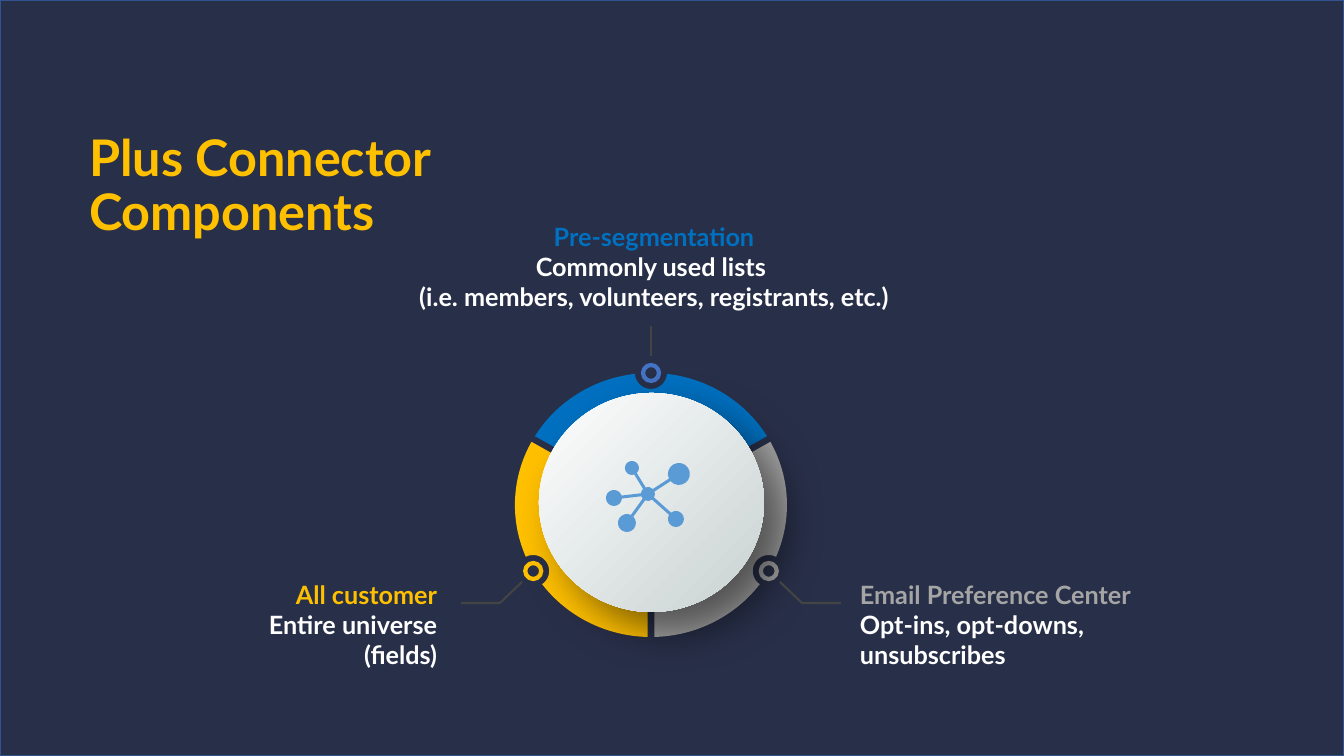
import math

from lxml import etree
from pptx import Presentation
from pptx.dml.color import RGBColor
from pptx.enum.shapes import MSO_CONNECTOR, MSO_SHAPE
from pptx.enum.text import MSO_ANCHOR, MSO_AUTO_SIZE, PP_ALIGN
from pptx.oxml.ns import qn
from pptx.util import Pt

PX = 914400 / 100.8
FINE = 100  # outline steps in one px

LEFT, CENTER, RIGHT = PP_ALIGN.LEFT, PP_ALIGN.CENTER, PP_ALIGN.RIGHT
OVAL, RECTANGLE = MSO_SHAPE.OVAL, MSO_SHAPE.RECTANGLE

NAVY = RGBColor(0x28, 0x2F, 0x48)
FRAME = RGBColor(0x31, 0x53, 0x8F)
WHITE = RGBColor(0xFF, 0xFF, 0xFF)
BLUE = RGBColor(0x00, 0x70, 0xC0)
DOT_BLUE = RGBColor(0x44, 0x72, 0xC4)
AMBER = RGBColor(0xFF, 0xC0, 0x00)
GREY = RGBColor(0xA5, 0xA5, 0xA5)
LEADER = RGBColor(0x44, 0x44, 0x44)
ICON_BLUE = RGBColor(0x5B, 0x9B, 0xD5)
DISC_LIGHT = RGBColor(0xFE, 0xFF, 0xFF)
DISC_DARK = RGBColor(0xC8, 0xD1, 0xD1)

deck = Presentation()
deck.slide_width, deck.slide_height = round(1344 * PX), round(756 * PX)
page = deck.slides.add_slide(deck.slide_layouts[5])


def write(paragraph, text, *, colour, size=18, align=LEFT, spacing=None):
    paragraph.text = text
    paragraph.alignment = align
    paragraph.line_spacing = spacing
    for span in paragraph.runs:
        span.font.name = "Lato"
        span.font.size = Pt(size)
        span.font.bold = True
        span.font.color.rgb = colour


def outline(arcs, fill=None, line=None):
    """Join arcs (x, y, x radius, y radius, start, end in degrees); closed if filled."""
    points, curves = [], []
    for x, y, radius_x, radius_y, start, end in arcs:
        pieces = math.ceil(abs(end - start) / 95)
        turn = math.radians(end - start) / max(pieces, 1)
        reach = 4 / 3 * math.tan(turn / 4)
        for piece in range(pieces + 1):
            angle = math.radians(start) + turn * piece
            across, down = math.cos(angle), math.sin(angle)
            arrive = (across + reach * down, down - reach * across)
            leave = (across - reach * down, down + reach * across)
            knots = [arrive] * (piece > 0) + [(across, down)] + [leave] * (piece < pieces)
            points += [((x + radius_x * u) * FINE, (y + radius_y * v) * FINE) for u, v in knots]
            if piece < pieces:
                curves.append(len(points) - 1)
    builder = page.shapes.build_freeform(*points[0], scale=PX / FINE)
    builder.add_line_segments(points[1:], close=fill is not None)
    shape = builder.convert_to_shape()
    segments = list(shape.element.iter(qn("a:lnTo")))
    for first in curves:
        curve = etree.Element(qn("a:cubicBezTo"))
        segments[first - 1].addprevious(curve)
        for segment in segments[first - 1:first + 2]:
            curve.append(segment[0])
            segment.getparent().remove(segment)
    shape.shadow.inherit = False
    if fill is None:
        shape.fill.background()
        shape.line.color.rgb = line
        shape.line.width = Pt(1.5)
    else:
        shape.fill.solid()
        shape.fill.fore_color.rgb = fill
        shape.line.fill.background()


# Backdrop and title
title = page.shapes.title
backdrop = page.shapes.add_shape(RECTANGLE, 0, 0, deck.slide_width, deck.slide_height)
backdrop.shadow.inherit = False
backdrop.fill.solid()
backdrop.fill.fore_color.rgb = NAVY
backdrop.line.color.rgb = FRAME
backdrop.line.width = Pt(1)
title.element.addprevious(backdrop.element)

title.left, title.top, title.width, title.height = (
    round(length * PX) for length in (79, 114, 1159, 146))
title.text_frame.vertical_anchor = MSO_ANCHOR.MIDDLE
title.text_frame.auto_size = MSO_AUTO_SIZE.NONE
write(title.text_frame.paragraphs[0], "Plus Connector\vComponents",
      colour=AMBER, size=36, spacing=0.9)

# Ring of three sectors, each notched around its dot
RING_X, RING_Y, RING_WIDE, RING_HIGH = 651, 505, 136, 132
HALF_SECTOR, HALF_NOTCH, NOTCH, DOT, GAP = 58.6, 6.8, 16, 16, 4
for middle, fill, dot_colour in ((270, BLUE, DOT_BLUE), (150, AMBER, AMBER), (30, GREY, GREY)):
    across, down = math.cos(math.radians(middle)), math.sin(math.radians(middle))
    dot_x, dot_y = RING_X + RING_WIDE * across, RING_Y + RING_HIGH * down
    ring = (RING_X, RING_Y, RING_WIDE, RING_HIGH)
    dot = page.shapes.add_shape(OVAL, round((dot_x - DOT / 2) * PX), round((dot_y - DOT / 2) * PX),
                                round(DOT * PX), round(DOT * PX))
    dot.shadow.inherit = False
    dot.fill.background()
    dot.line.color.rgb = dot_colour
    dot.line.width = Pt(3)
    outline([
        (RING_X + GAP * across, RING_Y + GAP * down, 0, 0, 0, 0),
        (*ring, middle - HALF_SECTOR, middle - HALF_NOTCH),
        (dot_x, dot_y, NOTCH, NOTCH, middle - 93, middle - 267),
        (*ring, middle + HALF_NOTCH, middle + HALF_SECTOR),
    ], fill=fill)

# Central disc
disc = page.shapes.add_shape(OVAL, *(round(length * PX) for length in (539, 393, 225, 219)))
disc.fill.gradient()
disc.fill.gradient_angle = 315
for stop, colour in zip(disc.fill.gradient_stops, (DISC_LIGHT, DISC_DARK)):
    stop.color.rgb = colour
disc.line.fill.background()
disc.shadow.inherit = False
shadow = etree.SubElement(disc.element.spPr.find(qn("a:effectLst")), qn("a:outerShdw"),
                          blurRad=str(Pt(30)), dist=str(Pt(20)), dir="2700000",
                          algn="tl", rotWithShape="0")
shade = etree.SubElement(shadow, qn("a:srgbClr"), val="000000")
etree.SubElement(shade, qn("a:alpha"), val="50000")

# Leaders
for side in (1, -1):
    outline([(RING_X + side * reach, y, 0, 0, 0, 0)
             for reach, y in ((129, 582), (151, 603), (190, 603))], line=LEADER)
stem = page.shapes.add_connector(MSO_CONNECTOR.STRAIGHT, *(
    round(length * PX) for length in (651, 356, 651, 326)))
stem.line.color.rgb = LEADER
stem.line.width = Pt(1.5)
etree.SubElement(stem.element.spPr, qn("a:effectLst"))

# Labels
labels = [
    ((176, 574, 271, 102), RIGHT, AMBER, ["All customer", "Entire universe", "(fields)"]),
    ((342, 216, 624, 102), CENTER, BLUE,
     ["Pre-segmentation", "Commonly used lists ", "(i.e. members, volunteers, registrants, etc.)"]),
    ((850, 574, 361, 102), LEFT, GREY,
     ["Email Preference Center", "Opt-ins, opt-downs, unsubscribes"]),
]
for place, align, accent, lines in labels:
    box = page.shapes.add_textbox(*(round(length * PX) for length in place))
    frame = box.text_frame
    frame.word_wrap = True
    frame.auto_size = MSO_AUTO_SIZE.SHAPE_TO_FIT_TEXT
    for index, text in enumerate(lines):
        paragraph = frame.add_paragraph() if index else frame.paragraphs[0]
        write(paragraph, text, colour=WHITE if index else accent, align=align)

# Network icon: one outline running clockwise around the hub and out to each node
HUB_X, HUB_Y, HUB, HALF_LINK = 648, 494, 7, 1.5
nodes = [(632, 468, 7), (679, 474, 11), (676, 519, 8), (627, 523, 9), (614, 498, 8)]
bearings = [math.degrees(math.atan2(y - HUB_Y, x - HUB_X)) for x, y, radius in nodes]
hub_spread = math.degrees(math.asin(HALF_LINK / HUB))
network = []
for (x, y, radius), bearing, following in zip(nodes, bearings, bearings[1:] + [bearings[0] + 360]):
    spread = math.degrees(math.asin(HALF_LINK / radius))
    network.append((x, y, radius, radius, bearing - 180 + spread, bearing + 180 - spread))
    network.append((HUB_X, HUB_Y, HUB, HUB, bearing + hub_spread, following - hub_spread))
outline(network, fill=ICON_BLUE)

deck.save("out.pptx")
